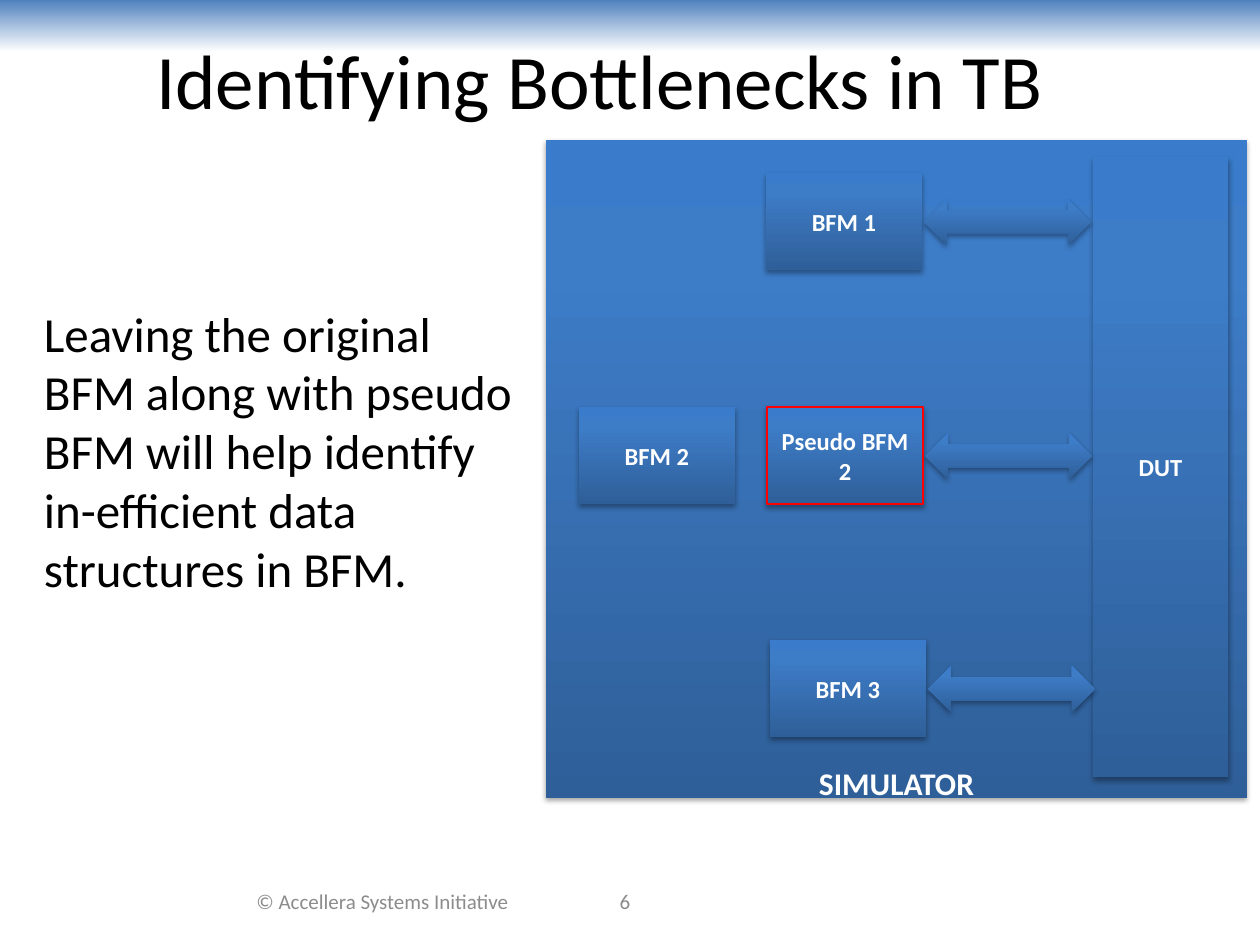
from copy import deepcopy
from lxml import etree
from pptx import Presentation
from pptx.dml.color import RGBColor
from pptx.enum.shapes import MSO_SHAPE
from pptx.enum.text import MSO_ANCHOR, PP_ALIGN
from pptx.oxml.ns import qn
from pptx.util import Emu, Pt

RECT, ARROW = MSO_SHAPE.RECTANGLE, MSO_SHAPE.LEFT_RIGHT_ARROW
TOP, MIDDLE = MSO_ANCHOR.TOP, MSO_ANCHOR.MIDDLE
LEFT, CENTER = PP_ALIGN.LEFT, PP_ALIGN.CENTER
WHITE = RGBColor(0xFF, 0xFF, 0xFF)
BLACK = RGBColor(0, 0, 0)
GRAY = RGBColor(0x8C, 0x8C, 0x8C)
RED = RGBColor(0xFF, 0, 0)
SKY = RGBColor(0x4F, 0x81, 0xBD)
DARK = RGBColor(0x2F, 0x5F, 0x99)
MID = RGBColor(0x3D, 0x7C, 0xC7)
LIGHT = RGBColor(0x3A, 0x7C, 0xCB)
FADE = [(0, SKY), (1, WHITE)]
BLUES = [(0, DARK), (0.8, MID), (1, LIGHT)]


def px(n):
    """Turn pixels into EMU."""
    return Emu(round(n * 914400 / 126))


def write(shape, text, size=14, color=WHITE, bold=False, align=CENTER,
          anchor=MIDDLE, top=6, right=13, bottom=6):
    """Put formatted text into a shape."""
    frame = shape.text_frame
    frame.word_wrap = True
    frame.vertical_anchor = anchor
    frame.margin_left, frame.margin_right = px(13), px(right)
    frame.margin_top, frame.margin_bottom = px(top), px(bottom)
    para = frame.paragraphs[0]
    para.alignment = align
    run = para.add_run()
    run.text = text
    font = run.font
    font.name, font.size, font.bold = "Calibri", Pt(size), bold
    font.color.rgb = color


def label(slide, box, text, **form):
    """Add a text box."""
    write(slide.shapes.add_textbox(*map(px, box)), text, **form)


def blend(shape, stops, angle):
    """Fill a shape with a linear gradient."""
    fill = shape.fill
    fill.gradient()
    fill.gradient_angle = angle
    group = shape._element.spPr.find(".//" + qn("a:gsLst"))
    for _ in range(len(stops) - len(group)):
        group.append(deepcopy(group[0]))
    for stop, (place, color) in zip(fill.gradient_stops, stops):
        stop.position = place
        stop.color.rgb = color


def shade(shape):
    """Give a shape a soft shadow below it."""
    holder = shape._element.spPr.find(qn("a:effectLst"))
    outer = etree.SubElement(
        holder, qn("a:outerShdw"), blurRad=str(Pt(3.1)), dist=str(Pt(1.8)),
        dir="5400000", rotWithShape="0")
    color = etree.SubElement(outer, qn("a:srgbClr"), val="000000")
    etree.SubElement(color, qn("a:alpha"), val="35000")


def panel(slide, box, kind=RECT, stops=BLUES, angle=90, edge=None):
    """Add a gradient shape with an optional outline."""
    shape = slide.shapes.add_shape(kind, *map(px, box))
    shape.shadow.inherit = False
    blend(shape, stops, angle)
    if edge is None:
        shape.line.fill.background()
    else:
        shape.line.color.rgb = edge
        shape.line.width = Pt(1.5)
    return shape


def block(slide, box, text=None, kind=RECT, edge=None, **form):
    """Add a shadowed part of the diagram."""
    shape = panel(slide, box, kind, edge=edge)
    shade(shape)
    if text:
        write(shape, text, bold=True, **form)


def main():
    """Build the slide."""
    deck = Presentation()
    deck.slide_width, deck.slide_height = px(1260), px(945)
    slide = deck.slides.add_slide(deck.slide_layouts[6])

    panel(slide, (0, 0, 1260, 52), stops=FADE, angle=270)
    block(slide, (546, 140, 701, 658), "SIMULATOR", size=18,
          anchor=TOP, top=624, bottom=0)
    block(slide, (1093, 157, 135, 620), "DUT")

    rows = [("BFM 1", 766, 173, None), ("Pseudo BFM 2", 767, 407, RED),
            ("BFM 3", 770, 640, None)]
    for name, left, top, edge in rows:
        block(slide, (left, top, 156, 97), name, edge=edge)
        block(slide, (left + 158, top + 26, 167, 46), kind=ARROW)
    block(slide, (579, 407, 156, 97), "BFM 2")

    label(slide, (94, 0, 1134, 157), "Identifying Bottlenecks in TB",
          size=44, color=BLACK, right=135)
    label(slide, (31, 157, 504, 651),
          "Leaving the original BFM along with pseudo BFM will help "
          "identify in-efficient data structures in BFM.",
          size=28, color=BLACK, align=LEFT, anchor=TOP, top=146)
    label(slide, (230, 876, 305, 50), "© Accellera Systems Initiative",
          size=12, color=GRAY)
    label(slide, (504, 876, 242, 50), "6", size=12, color=GRAY)
    deck.save("out.pptx")


if __name__ == "__main__":
    main()
